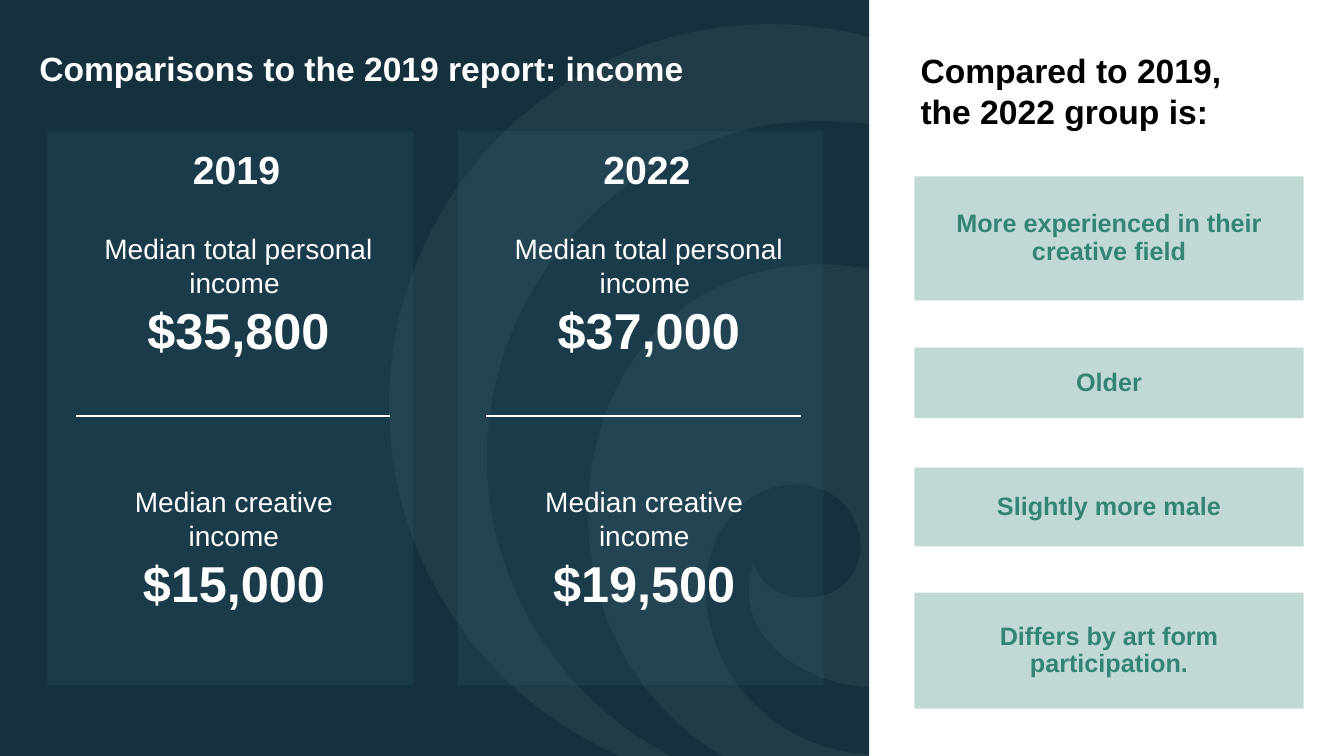
from lxml.etree import SubElement
from pptx import Presentation
from pptx.dml.color import RGBColor
from pptx.enum.shapes import MSO_CONNECTOR, MSO_SHAPE
from pptx.enum.text import MSO_ANCHOR, PP_ALIGN
from pptx.oxml.ns import qn
from pptx.util import Inches, Pt

COLORS = {"navy": "16313E", "white": "FFFFFF", "black": "000000",
          "card": "3B98B7", "green": "348476"}

TITLE = "Comparisons to the 2019 report: income"
# The trailing space takes part in the centring of the wrapped label.
TOTAL_LABEL = "Median total personal income "
CREATIVE_LABEL = "Median creative income"
YEARS = [("2019", "$35,800", "$15,000"), ("2022", "$37,000", "$19,500")]
GROUP_HEADING = "Compared to 2019, the 2022 group is:"
# text, top, height
DIFFERENCES = [
    ("More experienced in their creative field", 1.75, 1.23),
    ("Older", 3.45, 0.7),
    ("Slightly more male", 4.64, 0.78),
    ("Differs by art form participation.", 5.88, 1.15),
]
# Each swirl: start point, then three points (two controls, one end) per curve.
SWIRLS = [
    [(9.71, 7.29),
     (7.62, 8.69), (5.53, 6.81), (5.87, 4.64),
     (6.33, 1.74), (10.36, 2.11), (10.38, 4.83),
     (10.39, 5.84), (9.74, 6.82), (8.69, 6.82),
     (8.03, 6.82), (7.23, 6.34), (7.47, 5.59),
     (7.55, 5.82), (7.74, 5.93), (7.99, 5.93),
     (8.74, 5.93), (8.7, 4.89), (7.97, 4.81),
     (7.47, 4.75), (7, 5.21), (7, 5.83),
     (7, 6.77), (7.79, 7.48), (8.66, 7.48)],
    [(7.5, 7.8),
     (5.48, 7.73), (3.86, 6.06), (3.86, 4.02),
     (3.86, 1.93), (5.55, 0.24), (7.64, 0.24),
     (9.67, 0.24), (11.33, 1.85), (11.4, 3.87),
     (11.09, 2.36), (9.74, 1.2), (8.15, 1.2),
     (6.35, 1.2), (4.83, 2.72), (4.83, 4.54),
     (4.83, 6.13), (5.99, 7.49), (7.5, 7.8)],
]
CARD_LEFT, CARD_STEP, CARD_TOP = 0.47, 4.07, 1.3
CARD_WIDTH, CARD_HEIGHT = 3.63, 5.5
DIFFERENCE_LEFT, DIFFERENCE_WIDTH = 9.07, 3.86

YEAR = {"size": Pt(28), "bold": True}
LABEL = {"size": Pt(20), "bold": False}
AMOUNT = {"size": Pt(36), "bold": True}
HEADING = {"size": Pt(24), "bold": True}
DIFFERENCE = {"size": Pt(18), "bold": True}


def paint(shape, color, opacity=100):
    shape.shadow.inherit = False
    shape.line.fill.background()
    shape.fill.solid()
    shape.fill.fore_color.rgb = RGBColor.from_string(COLORS[color])
    if opacity < 100:
        tint = shape.fill._xPr.find(qn("a:solidFill"))[0]
        SubElement(tint, qn("a:alpha"), val=str(opacity * 1000))


def add_panel(page, area, color, opacity=100):
    panel = page.shapes.add_shape(MSO_SHAPE.RECTANGLE, *map(Inches, area))
    paint(panel, color, opacity)
    return panel


def write(shape, lines, color, align=PP_ALIGN.CENTER, insets=(0, 0),
          anchor=MSO_ANCHOR.TOP, spacing=None):
    """Fill a shape with one paragraph for each (text, font format) pair."""
    frame = shape.text_frame
    frame.word_wrap = True
    frame.vertical_anchor = anchor
    across, down = map(Inches, insets)
    frame.margin_left = frame.margin_right = across
    frame.margin_top = frame.margin_bottom = down
    for index, (text, font_format) in enumerate(lines):
        para = frame.add_paragraph() if index else frame.paragraphs[0]
        para.alignment = align
        if spacing:
            para.line_spacing = spacing
        span = para.add_run()
        span.text = text
        span.font.name = "Arial"
        span.font.color.rgb = RGBColor.from_string(COLORS[color])
        for name, value in font_format.items():
            setattr(span.font, name, value)


def add_text(page, area, lines, color="white", **layout):
    box = page.shapes.add_textbox(*map(Inches, area))
    write(box, lines, color, **layout)


def add_swirl(page, points):
    """Draw a closed outline, turning each three straight steps into a curve."""
    start, *steps = [tuple(map(Inches, point)) for point in points]
    outline = page.shapes.build_freeform(*start)
    outline.add_line_segments(steps, close=True)
    swirl = outline.convert_to_shape()
    lines = list(swirl._element.iter(qn("a:lnTo")))
    for first in range(0, len(steps), 3):
        curve = lines[first].makeelement(qn("a:cubicBezTo"))
        lines[first].addprevious(curve)
        for line in lines[first:first + 3]:
            curve.append(line[0])
            line.getparent().remove(line)
    paint(swirl, "white", 5)


def add_divider(page, left, right, top):
    divider = page.shapes.add_connector(
        MSO_CONNECTOR.STRAIGHT, *map(Inches, (left, top, right, top)))
    divider.line.color.rgb = RGBColor.from_string(COLORS["white"])
    divider.line.width = Pt(1.5)
    SubElement(divider._element.spPr, qn("a:effectLst"))


def add_year_card(page, left, year, total, creative):
    add_panel(page, (left, CARD_TOP, CARD_WIDTH, CARD_HEIGHT), "card", 10)
    add_text(page, (left + 0.37, 2.3, 3.05, 1.28),
             [(TOTAL_LABEL, LABEL), (total, AMOUNT)])
    add_text(page, (left + 0.47, 4.81, 2.76, 1.28),
             [(CREATIVE_LABEL, LABEL), (creative, AMOUNT)])
    add_divider(page, left + 0.28, left + 3.4, 4.13)
    add_text(page, (left + 0.35, 1.44, 3.05, 0.47), [(year, YEAR)])


def main():
    deck = Presentation()
    deck.slide_width, deck.slide_height = Inches(13.33), Inches(7.5)
    page = deck.slides.add_slide(deck.slide_layouts[6])

    add_panel(page, (0, 0, 8.62, 7.5), "navy")
    for points in SWIRLS:
        add_swirl(page, points)
    add_text(page, (0.39, 0.46, 12.54, 0.44), [(TITLE, HEADING)],
             align=PP_ALIGN.LEFT, anchor=MSO_ANCHOR.MIDDLE)

    for index, figures in enumerate(YEARS):
        add_year_card(page, CARD_LEFT + index * CARD_STEP, *figures)

    add_text(page, (9.01, 0.45, 3.32, 0.91), [(GROUP_HEADING, HEADING)],
             color="black", align=PP_ALIGN.LEFT, insets=(0.12, 0.05))
    for text, top, height in DIFFERENCES:
        panel = add_panel(
            page, (DIFFERENCE_LEFT, top, DIFFERENCE_WIDTH, height), "green", 30)
        write(panel, [(text, DIFFERENCE)], "green", insets=(0.13, 0.13),
              anchor=MSO_ANCHOR.MIDDLE, spacing=0.9)

    deck.save("out.pptx")


if __name__ == "__main__":
    main()
